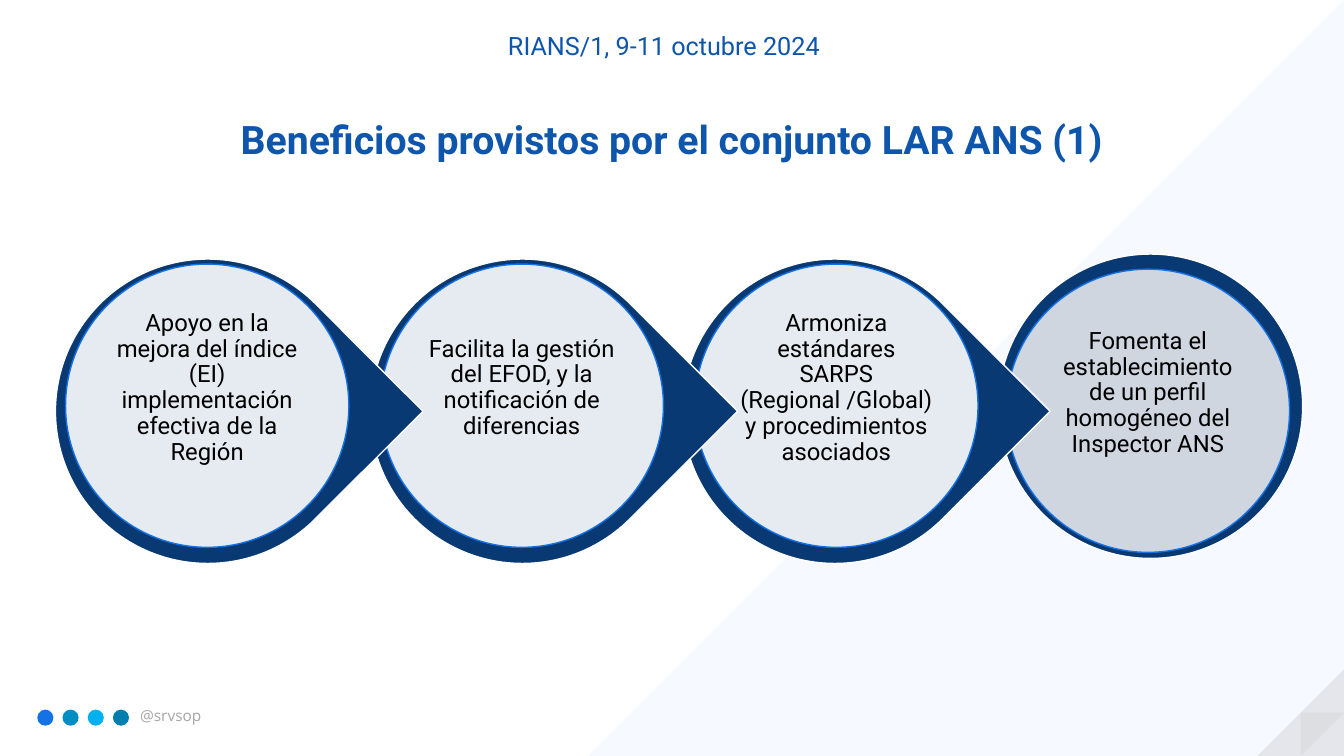
from lxml import etree
from pptx import Presentation
from pptx.dml.color import RGBColor
from pptx.enum import shapes, text
from pptx.oxml import ns
from pptx.util import Inches, Pt

HEADER = "RIANS/1, 9-11 octubre 2024"
TITLE = "Beneficios provistos por el conjunto LAR ANS (1)"
HANDLE = "@srvsop"
# Each benefit: wording, left of the outer shape, left of the inner disc
BENEFITS = [
    ("Apoyo en la mejora del índice (EI) implementación efectiva de la Región", 0.55, 0.65),
    ("Facilita la gestión del EFOD, y la notificación de diferencias", 3.67, 3.77),
    ("Armoniza estándares\vSARPS (Regional /Global) y procedimientos asociados", 6.77, 6.89),
    ("Fomenta el establecimiento de un perfil homogéneo del Inspector ANS", 9.9, 9.98),
]
COLORS = {
    "white": "FFFFFF", "black": "000000", "title": "0E55AC", "navy": "093973",
    "outline": "1372E6", "last_disc": "CFD6E0", "backdrop": "F6F9FF",
    "corner": "A6A6A6", "fold": "BFBFBF", "handle": "A6A6A6",
}
SOCIAL_COLORS = ["1372E6", "008DC3", "00B0F0", "007EAE"]
RING, DISC, LABEL = 3.02, 2.81, 2.01
LABEL_OFFSET = (DISC - LABEL) / 2
SHAPE = shapes.MSO_SHAPE

presentation = Presentation()
presentation.slide_width, presentation.slide_height = Inches(13.33), Inches(7.5)
slide = presentation.slides.add_slide(presentation.slide_layouts[5])


def add_square(kind, left, top, size, fill, line=None, rotation=0, opacity=100):
    """Add a preset shape of equal width and height."""
    shape = slide.shapes.add_shape(kind, Inches(left), Inches(top), Inches(size), Inches(size))
    shape.shadow.inherit = False
    shape.rotation = rotation
    shape.fill.solid()
    shape.fill.fore_color.rgb = RGBColor.from_string(fill)
    if opacity < 100:
        color = shape.fill._xPr.find(".//" + ns.qn("a:srgbClr"))
        etree.SubElement(color, ns.qn("a:alpha")).set("val", str(opacity * 1000))
    if line:
        shape.line.color.rgb = RGBColor.from_string(line)
        shape.line.width = Pt(1)
    else:
        shape.line.fill.background()


def write(shape, words, size, color, font="Roboto", bold=False, align=text.PP_ALIGN.CENTER):
    frame = shape.text_frame
    frame.word_wrap = True
    frame.auto_size = text.MSO_AUTO_SIZE.NONE
    frame.text = words
    paragraph = frame.paragraphs[0]
    paragraph.alignment = align
    for run in paragraph.runs:
        run.font.name, run.font.size, run.font.bold = font, Pt(size), bold
        run.font.color.rgb = RGBColor.from_string(COLORS[color])
    return frame


def add_text_box(left, top, width, height):
    return slide.shapes.add_textbox(Inches(left), Inches(top), Inches(width), Inches(height))


def add_benefit(words, ring_left, disc_left, is_last):
    if is_last:
        ring, ring_top, disc_top, rotation = SHAPE.OVAL, 2.52, 2.67, 0
        disc_fill, opacity = COLORS["last_disc"], 100
    else:
        ring, ring_top, disc_top, rotation = SHAPE.TEAR, 2.57, 2.62, 45
        disc_fill, opacity = COLORS["white"], 90
    add_square(ring, ring_left, ring_top, RING, COLORS["navy"], COLORS["white"], rotation)
    add_square(SHAPE.OVAL, disc_left, disc_top, DISC, disc_fill, COLORS["outline"],
               opacity=opacity)
    label = add_text_box(disc_left + LABEL_OFFSET, disc_top + LABEL_OFFSET, LABEL, LABEL)
    frame = write(label, words, 17, "black")
    frame.vertical_anchor = text.MSO_ANCHOR.MIDDLE
    frame.margin_left = frame.margin_right = frame.margin_top = Inches(0.02)
    frame.margin_bottom = Inches(0.37)
    frame.paragraphs[0].line_spacing = 0.9


add_square(SHAPE.RIGHT_TRIANGLE, 5.83, 0, 7.5, COLORS["backdrop"], rotation=270)
add_square(SHAPE.RIGHT_TRIANGLE, 12.47, 6.64, 0.86, COLORS["corner"], rotation=270, opacity=22)
add_square(SHAPE.RIGHT_TRIANGLE, 12.9, 7.07, 0.43, COLORS["fold"], rotation=90, opacity=20)

for index, color in enumerate(SOCIAL_COLORS):
    add_square(SHAPE.OVAL, 0.37 + 0.25 * index, 7.04, 0.16, color)
write(add_text_box(1.29, 6.96, 1.49, 0.29), HANDLE, 11, "handle", "Open Sans",
      align=text.PP_ALIGN.LEFT)
write(add_text_box(3.59, 0.25, 5.99, 0.4), HEADER, 18, "title")

title = slide.shapes.title
title.left, title.top = Inches(1.01), Inches(1.09)
title.width, title.height = Inches(11.3), Inches(0.57)
write(title, TITLE, 28, "title", bold=True).vertical_anchor = text.MSO_ANCHOR.TOP

# The last benefit lies at the back so that each point overlaps the next circle
for benefit in reversed(BENEFITS):
    add_benefit(*benefit, is_last=benefit is BENEFITS[-1])

presentation.save("out.pptx")
